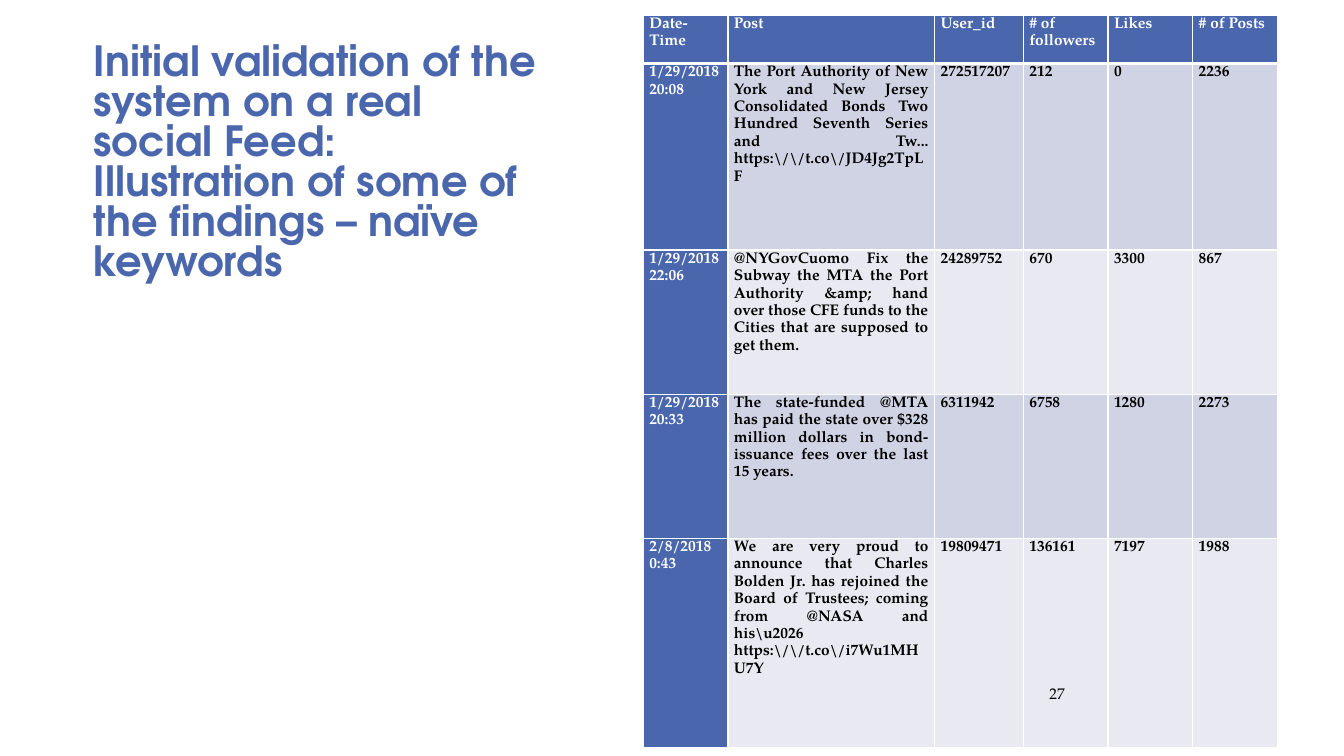
from lxml import etree
from pptx import Presentation
from pptx.dml.color import RGBColor
from pptx.enum.text import MSO_ANCHOR, PP_ALIGN
from pptx.oxml.ns import qn
from pptx.util import Inches, Pt

LEFT, RIGHT, JUSTIFY = PP_ALIGN.LEFT, PP_ALIGN.RIGHT, PP_ALIGN.JUSTIFY
BOTTOM, MIDDLE = MSO_ANCHOR.BOTTOM, MSO_ANCHOR.MIDDLE
HEADING_FONT, BODY_FONT = "TeX Gyre Adventor", "TeX Gyre Pagella"
COLORS = {
    "blue": "4A66AC",
    "dark_band": "D0D3E3",
    "light_band": "E9EAF1",
    "white": "FFFFFF",
    "black": "000000",
}

TITLE_LINES = [
    "Initial validation of the system on a real social Feed:",
    "Illustration of some of the findings – naïve keywords",
]
ROWS = [
    ["Date-Time", "Post", "User_id", "# of followers", "Likes", "# of Posts"],
    ["1/29/2018 20:08",
     "The Port Authority of New York and New Jersey Consolidated Bonds Two "
     "Hundred Seventh Series and Tw... https:\\/\\/t.co\\/JD4Jg2TpLF",
     "272517207", "212", "0", "2236"],
    ["1/29/2018 22:06",
     "@NYGovCuomo Fix the Subway the MTA the Port Authority &amp; hand over "
     "those CFE funds to the Cities that are supposed to get them.",
     "24289752", "670", "3300", "867"],
    ["1/29/2018 20:33",
     "The state-funded @MTA has paid the state over $328 million dollars in "
     "bond-issuance fees over the last 15 years.",
     "6311942", "6758", "1280", "2273"],
    ["2/8/2018 0:43",
     "We are very proud to announce that Charles Bolden Jr. has rejoined the "
     "Board of Trustees; coming from @NASA and his\\u2026 "
     "https:\\/\\/t.co\\/i7Wu1MHU7Y",
     "19809471", "136161", "7197", "1988"],
]
COLUMN_WIDTHS = [0.84, 2.05, 0.88, 0.84, 0.84, 0.84]
ROW_HEIGHTS = [0.48, 1.85, 1.43, 1.43, 2.08]


def add_span(para, text, font_name, size, color, bold):
    span = para.add_run()
    span.text = text
    span.font.name = font_name
    span.font.size = Pt(size)
    span.font.bold = bold
    span.font.color.rgb = RGBColor.from_string(COLORS[color])


def add_border(cell, side, width):
    """Draw a white line on one side (L, R, T or B); call before filling the cell."""
    properties = cell._tc.get_or_add_tcPr()
    line = etree.SubElement(properties, qn(f"a:ln{side}"), w=str(Pt(width)))
    fill = etree.SubElement(line, qn("a:solidFill"))
    etree.SubElement(fill, qn("a:srgbClr"), val=COLORS["white"])


deck = Presentation()
deck.slide_width, deck.slide_height = Inches(13.33), Inches(7.5)
page = deck.slides.add_slide(deck.slide_layouts[6])

# Title
title = page.shapes.add_textbox(Inches(0.83), Inches(1.42), Inches(4.6), Inches(1.45))
title.text_frame.word_wrap = True
title.text_frame.vertical_anchor = BOTTOM
para = title.text_frame.paragraphs[0]
para.line_spacing = 0.8
for index, line_text in enumerate(TITLE_LINES):
    if index:
        para.add_line_break()
    add_span(para, line_text, HEADING_FONT, 29.7, "blue", True)

# Table of findings
findings = page.shapes.add_table(
    len(ROWS), len(COLUMN_WIDTHS), Inches(6.38), Inches(0.15),
    Inches(sum(COLUMN_WIDTHS)), Inches(sum(ROW_HEIGHTS))).table
for column, width in zip(findings.columns, COLUMN_WIDTHS):
    column.width = Inches(width)
for row, height in zip(findings.rows, ROW_HEIGHTS):
    row.height = Inches(height)

for row_index, values in enumerate(ROWS):
    band = "dark_band" if row_index % 2 else "light_band"
    for column_index, value in enumerate(values):
        cell = findings.cell(row_index, column_index)
        is_header = row_index == 0
        is_blue = is_header or column_index == 0
        cell.margin_left = cell.margin_right = Inches(0.06)
        cell.margin_top = cell.margin_bottom = 0
        for side in "LRTB":
            thick = (is_header and side == "B") or (row_index == 1 and side == "T")
            add_border(cell, side, 3 if thick else 1)
        cell.fill.solid()
        cell.fill.fore_color.rgb = RGBColor.from_string(COLORS["blue" if is_blue else band])
        para = cell.text_frame.paragraphs[0]
        para.alignment = LEFT if is_header else JUSTIFY
        para.line_spacing = 1.15
        add_span(para, value, BODY_FONT, 11, "white" if is_blue else "black", True)

# Slide number
number = page.shapes.add_textbox(Inches(9.33), Inches(6.73), Inches(1.33), Inches(0.3))
number.text_frame.word_wrap = True
number.text_frame.vertical_anchor = MIDDLE
para = number.text_frame.paragraphs[0]
para.alignment = RIGHT
add_span(para, "27", BODY_FONT, 11, "black", False)

deck.save("out.pptx")
